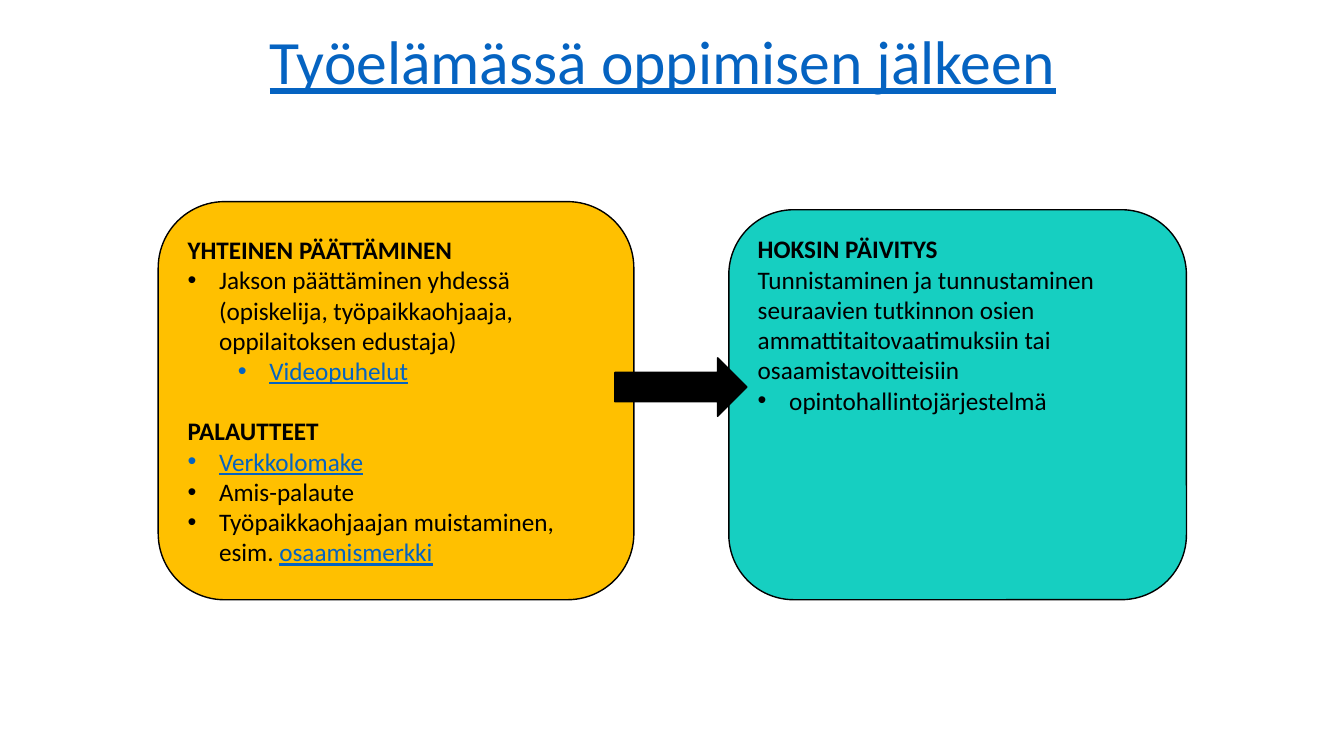
from pptx import Presentation
from pptx import util as u
from pptx.dml.color import RGBColor
from pptx.enum import shapes, text
from pptx.oxml.ns import qn
from lxml import etree

COLORS = {
    "black": "000000",
    "link": "0563C1",
    "yellow": "FFC000",
    "teal": "16CFC1",
}
BULLET, SUB_BULLET = 22.5, 58.5  # left margins of the two bullet levels
HANGING = 22.5
LINE_GAP = 21.6


class SlideBuilder:
    def __init__(self, prs, font="Calibri", body_size=18):
        self.slide = prs.slides.add_slide(prs.slide_layouts[6])
        self.font = font
        self.body_size = body_size

    def format_run(self, r, size, color="black", bold=False, underline=False):
        r.font.name = self.font
        r.font.size = u.Pt(size)
        r.font.bold = bold
        r.font.underline = underline
        r.font.color.rgb = RGBColor.from_string(COLORS[color])

    def title(self, x, y, w, h, words):
        tf = self.slide.shapes.add_textbox(*map(u.Pt, (x, y, w, h))).text_frame
        tf.word_wrap = True
        tf.vertical_anchor = text.MSO_ANCHOR.MIDDLE
        tf.text = words
        p = tf.paragraphs[0]
        p.alignment = text.PP_ALIGN.CENTER
        p.line_spacing = 0.9
        self.format_run(p.runs[0], 44, "link", underline=True)

    def shape(self, kind, x, y, w, h, fill):
        sp = self.slide.shapes.add_shape(kind, *map(u.Pt, (x, y, w, h)))
        sp.shadow.inherit = False
        sp.fill.solid()
        sp.fill.fore_color.rgb = RGBColor.from_string(COLORS[fill])
        sp.line.color.rgb = RGBColor.from_string(COLORS["black"])
        sp.line.width = u.Pt(1)
        return sp

    def card(self, x, y, w, h, fill, anchor, items):
        """Rounded box; each item is (style, plain text, link-coloured text)."""
        sp = self.shape(shapes.MSO_SHAPE.ROUNDED_RECTANGLE, x, y, w, h, fill)
        tf = sp.text_frame
        tf.word_wrap = True
        tf.vertical_anchor = anchor
        for i, (style, plain, link) in enumerate(items):
            p = tf.add_paragraph() if i else tf.paragraphs[0]
            p.alignment = text.PP_ALIGN.LEFT
            if style == "heading" and i:
                p.space_before = u.Pt(LINE_GAP)
            if style == "bullet":
                self.bullet(p, BULLET)
            elif style == "sub":
                p.level = 1
                self.bullet(p, SUB_BULLET)
            for words, color in ((plain, "black"), (link, "link")):
                if words:
                    r = p.add_run()
                    r.text = words
                    self.format_run(r, self.body_size, color,
                                    bold=style == "heading",
                                    underline=color == "link")

    def bullet(self, p, margin):
        pPr = p._p.get_or_add_pPr()
        pPr.set("marL", str(u.Pt(margin)))
        pPr.set("indent", str(-u.Pt(HANGING)))
        etree.SubElement(pPr, qn("a:buFont")).set("typeface", "Arial")
        etree.SubElement(pPr, qn("a:buChar")).set("char", "•")


def main():
    prs = Presentation()
    prs.slide_width, prs.slide_height = u.Pt(960), u.Pt(540)
    s = SlideBuilder(prs)

    s.title(76.3, 14.4, 794.2, 63.4, "Työelämässä oppimisen jälkeen")
    s.card(113, 144, 339.8, 284.4, "yellow", text.MSO_ANCHOR.MIDDLE, [
        ("heading", "YHTEINEN PÄÄTTÄMINEN", ""),
        ("bullet", "Jakson päättäminen yhdessä (opiskelija, "
                   "työpaikkaohjaaja, oppilaitoksen edustaja)", ""),
        ("sub", "", "Videopuhelut"),
        ("heading", "PALAUTTEET", ""),
        ("bullet", "", "Verkkolomake"),
        ("bullet", "Amis-palaute", ""),
        ("bullet", "Työpaikkaohjaajan muistaminen, esim. ", "osaamismerkki"),
    ])
    s.card(520.6, 149.8, 326.9, 278.6, "teal", text.MSO_ANCHOR.TOP, [
        ("heading", "HOKSIN PÄIVITYS", ""),
        ("plain", "Tunnistaminen ja tunnustaminen seuraavien tutkinnon osien "
                  "ammattitaitovaatimuksiin tai osaamistavoitteisiin", ""),
        ("bullet", "opintohallintojärjestelmä", ""),
    ])
    s.shape(shapes.MSO_SHAPE.RIGHT_ARROW, 439.2, 255.6, 94.3, 41.8, "black")

    prs.save("out.pptx")


if __name__ == "__main__":
    main()
